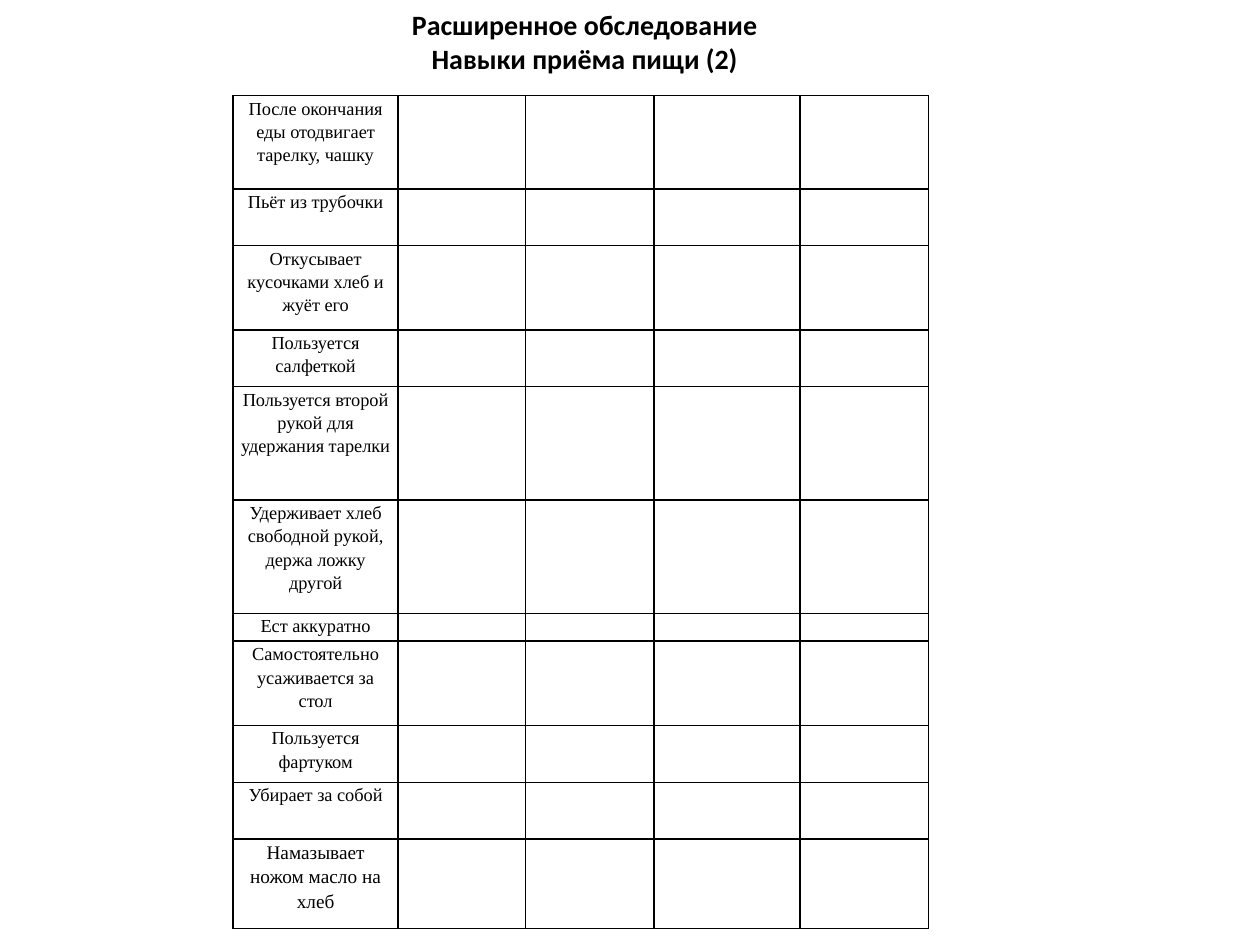
from lxml.etree import SubElement
from pptx import Presentation
from pptx.dml.color import RGBColor
from pptx.enum.text import MSO_ANCHOR, PP_ALIGN
from pptx.oxml.ns import qn
from pptx.util import Inches, Pt

COLORS = {"ink": "000000", "paper": "FFFFFF"}
TITLE_LINES = ["Расширенное обследование", "Навыки приёма пищи (2)"]
COLUMN_WIDTHS = [1.31, 1.01, 1.02, 1.16, 1.02]
# Skill, row height in inches, text size in points
SKILLS = [
    ("После окончания еды отодвигает тарелку, чашку", 0.74, 10.5),
    ("Пьёт из трубочки", 0.45, 10.5),
    ("Откусывает кусочками хлеб и жуёт его", 0.67, 10.5),
    ("Пользуется салфеткой", 0.45, 10.5),
    ("Пользуется второй рукой для удержания тарелки", 0.9, 10.5),
    ("Удерживает хлеб свободной рукой, держа ложку другой", 0.9, 10.5),
    ("Ест аккуратно", 0.22, 10.5),
    ("Самостоятельно усаживается за стол", 0.67, 10.5),
    ("Пользуется фартуком", 0.45, 10.5),
    ("Убирает за собой", 0.45, 10.5),
    ("Намазывает ножом масло на хлеб", 0.71, 11),
]


def style_paragraph(paragraph, font_name, size, bold=False):
    paragraph.alignment = PP_ALIGN.CENTER
    font = paragraph.font
    font.name, font.size, font.bold = font_name, Pt(size), bold
    font.color.rgb = RGBColor.from_string(COLORS["ink"])


def add_title(slide):
    title = slide.shapes.title
    title.left, title.top = Inches(2.14), Inches(0.01)
    title.width, title.height = Inches(5), Inches(0.64)
    frame = title.text_frame
    frame.text = "\n".join(TITLE_LINES)
    frame.vertical_anchor = MSO_ANCHOR.TOP
    for paragraph in frame.paragraphs:
        style_paragraph(paragraph, "Calibri", 16, bold=True)


def set_borders(cell):
    """Draw a 1 pt line on all four sides; call before setting the fill."""
    properties = cell._tc.get_or_add_tcPr()
    for side in ("lnL", "lnR", "lnT", "lnB"):
        line = SubElement(properties, qn(f"a:{side}"), w=str(Pt(1)))
        fill = SubElement(line, qn("a:solidFill"))
        SubElement(fill, qn("a:srgbClr"), val=COLORS["ink"])


def format_cell(cell, text, size):
    cell.margin_left = cell.margin_right = Inches(0.05)
    cell.margin_top = cell.margin_bottom = 0
    set_borders(cell)
    cell.fill.solid()
    cell.fill.fore_color.rgb = RGBColor.from_string(COLORS["paper"])
    cell.text = text
    paragraph = cell.text_frame.paragraphs[0]
    style_paragraph(paragraph, "Times New Roman", size)
    paragraph.line_spacing = 1.15
    if not text:  # an empty cell takes its line height from the end mark
        SubElement(paragraph._p, qn("a:endParaRPr"), sz=str(int(size * 100)))


def add_skill_table(slide):
    height = sum(row_height for _, row_height, _ in SKILLS)
    table = slide.shapes.add_table(
        len(SKILLS), len(COLUMN_WIDTHS), Inches(1.85), Inches(0.76),
        Inches(sum(COLUMN_WIDTHS)), Inches(height)).table
    table.first_row = table.horz_banding = False
    for column, width in zip(table.columns, COLUMN_WIDTHS):
        column.width = Inches(width)
    for row, (skill, row_height, size) in zip(table.rows, SKILLS):
        row.height = Inches(row_height)
        for index, cell in enumerate(row.cells):
            format_cell(cell, skill if index == 0 else "", size)


def main():
    presentation = Presentation()
    presentation.slide_width, presentation.slide_height = Inches(10), Inches(7.5)
    slide = presentation.slides.add_slide(presentation.slide_layouts[5])
    add_skill_table(slide)
    add_title(slide)
    presentation.save("out.pptx")


if __name__ == "__main__":
    main()
